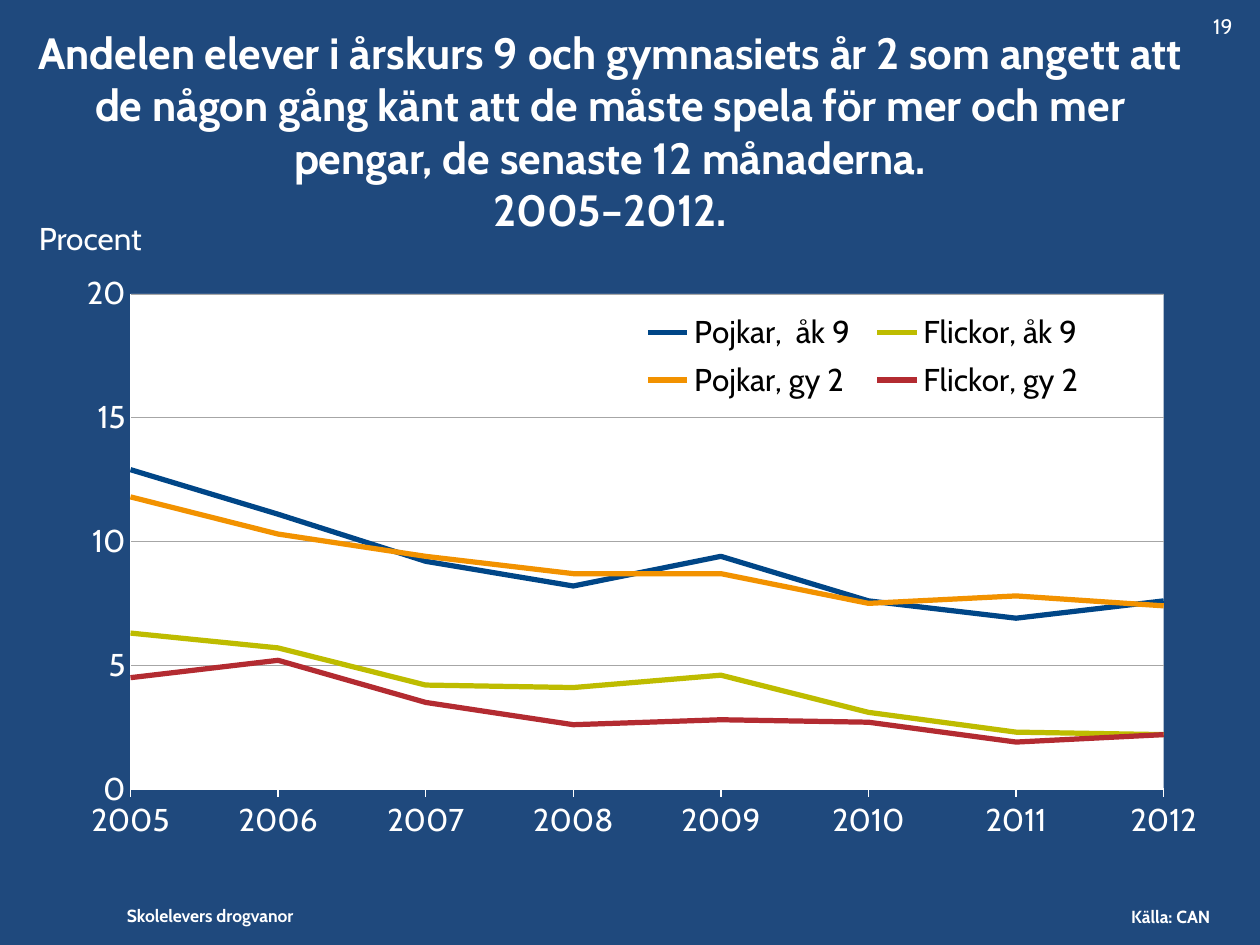
"""Build a slide with a line chart of pupils who felt a need to gamble for more and more money."""
from typing import NamedTuple

from lxml.etree import SubElement
from pptx import Presentation
from pptx.chart.data import CategoryChartData
from pptx.dml.color import RGBColor
from pptx.enum.chart import XL_CHART_TYPE as ChartType, XL_LEGEND_POSITION as LegendPos, XL_TICK_MARK as Tick
from pptx.enum.text import MSO_ANCHOR as Anchor, PP_ALIGN as Align
from pptx.oxml import parse_xml
from pptx.oxml.ns import nsdecls, qn
from pptx.util import Inches, Pt

WHITE = RGBColor(0xFF, 0xFF, 0xFF)
BLACK = RGBColor(0, 0, 0)
NAVY = RGBColor(0x1F, 0x49, 0x7D)
GREY = RGBColor(0xA6, 0xA6, 0xA6)
BLUE = RGBColor(0x00, 0x46, 0x87)
OLIVE = RGBColor(0xBE, 0xBC, 0x00)
ORANGE = RGBColor(0xF2, 0x92, 0x00)
RED = RGBColor(0xB3, 0x2B, 0x31)
FONT = "Cabin"
WIDTH, HEIGHT = Inches(10), Inches(7.5)


class Box(NamedTuple):
    """Left, top, width and height as shares of the enclosing area, in percent."""
    x: float
    y: float
    w: float
    h: float

    def on_slide(self) -> list[int]:
        """Return the box as lengths on the slide."""
        return [int(v * side / 100) for v, side in zip(self, (WIDTH, HEIGHT) * 2)]


class Label(NamedTuple):
    """A text box on the slide."""
    text: str
    box: Box
    size: float
    bold: bool = False
    align: Align = Align.LEFT
    anchor: Anchor = Anchor.TOP
    wrap: bool = True


class Line(NamedTuple):
    """A chart series."""
    name: str
    color: RGBColor
    values: tuple[float, ...]


LABELS = (
    Label("Skolelevers drogvanor", Box(9.1, 95.07, 16.7, 5), 10, True, wrap=False),
    Label("Källa: CAN", Box(88.8, 95.2, 9.4, 3.6), 10, True, wrap=False),
    Label("Andelen elever i årskurs 9 och gymnasiets år 2 som angett att de någon gång känt "
          "att de måste spela för mer och mer pengar, de senaste 12 månaderna.\v2005–2012.",
          Box(1.5, 6.93, 93.8, 13.73), 25, True, Align.CENTER, Anchor.MIDDLE),
    Label("Procent", Box(2.1, 22.53, 14.4, 5.33), 18, anchor=Anchor.MIDDLE),
    Label("19", Box(95.3, 0.8, 4.7, 4), 12),
)
LINES = (
    Line("Pojkar,  åk 9", BLUE, (12.9, 11.1, 9.2, 8.2, 9.4, 7.6, 6.9, 7.6)),
    Line("Flickor, åk 9", OLIVE, (6.3, 5.7, 4.2, 4.1, 4.6, 3.1, 2.3, 2.2)),
    Line("Pojkar, gy 2", ORANGE, (11.8, 10.3, 9.4, 8.7, 8.7, 7.5, 7.8, 7.4)),
    Line("Flickor, gy 2", RED, (4.5, 5.2, 3.5, 2.6, 2.8, 2.7, 1.9, 2.2)),
)
YEARS = [str(year) for year in range(2005, 2013)]
CHART = Box(4.8, 29.07, 90.2, 61.6)
PLOT = Box(6.2, 3.3, 91.4, 85.1)
LEGEND = Box(50.5, 5, 41, 18)


def set_all(target, values: dict) -> None:
    """Set every named attribute of an object."""
    for name, value in values.items():
        setattr(target, name, value)


def style_font(font, size: float, color: RGBColor = WHITE, bold: bool = False) -> None:
    """Give a font the slide's typeface, with a size, colour and weight."""
    set_all(font, {"name": FONT, "size": Pt(size), "bold": bold})
    font.color.rgb = color


def style_line(line, color: RGBColor, width: float) -> None:
    """Give a line a colour and a width in points."""
    line.color.rgb = color
    line.width = Pt(width)


def add_label(s, label: Label) -> None:
    """Add a text box."""
    tf = s.shapes.add_textbox(*label.box.on_slide()).text_frame
    set_all(tf, {"text": label.text, "word_wrap": label.wrap, "vertical_anchor": label.anchor})
    p = tf.paragraphs[0]
    p.alignment = label.align
    for r in p.runs:
        style_font(r.font, label.size, bold=label.bold)


def place(layout, box: Box, inner: bool = False) -> None:
    """Fix the place of a chart part within the chart."""
    manual = SubElement(layout, qn("c:manualLayout"))
    values = {"layoutTarget": "inner"} if inner else {}
    values |= {"xMode": "edge", "yMode": "edge"}
    values |= {name: f"{v / 100:.3f}" for name, v in zip("xywh", box)}
    for name, value in values.items():
        SubElement(manual, qn(f"c:{name}")).set("val", value)


def style_plot(chart) -> None:
    """Place the plot area, fill it with white and start the lines on its edge."""
    area = chart.element.chart.plotArea
    for old in area.findall(qn("c:layout")):
        area.remove(old)
    layout = parse_xml(f"<c:layout {nsdecls('c')}/>")
    area.insert(0, layout)
    place(layout, PLOT, inner=True)
    area.append(parse_xml(f'<c:spPr {nsdecls("c", "a")}><a:solidFill><a:srgbClr val="{WHITE}"/>'
                          "</a:solidFill></c:spPr>"))
    axis = area.find(qn("c:valAx"))
    for old in axis.findall(qn("c:crossBetween")):
        axis.remove(old)
    axis.find(qn("c:crosses")).addnext(parse_xml(f'<c:crossBetween {nsdecls("c")} val="midCat"/>'))


def style_axes(chart) -> None:
    """Format both axes and the gridlines."""
    years, percent = chart.category_axis, chart.value_axis
    set_all(years, {"major_tick_mark": Tick.OUTSIDE, "has_major_gridlines": False})
    set_all(percent, {"minimum_scale": 0, "maximum_scale": 20, "major_unit": 5,
                      "major_tick_mark": Tick.NONE, "has_major_gridlines": True})
    set_all(percent.tick_labels, {"number_format": "0", "number_format_is_linked": False})
    for axis, width in ((years, 0.75), (percent, 0.23)):
        style_font(axis.tick_labels.font, 18)
        style_line(axis.format.line, WHITE, width)
    style_line(percent.major_gridlines.format.line, GREY, 0.23)


def style_legend(chart) -> None:
    """Lay the legend over the upper right of the plot."""
    chart.has_legend = True
    legend = chart.legend
    set_all(legend, {"position": LegendPos.TOP, "include_in_layout": False})
    style_font(legend.font, 18, BLACK)
    layout = parse_xml(f"<c:layout {nsdecls('c')}/>")
    place(layout, LEGEND)
    for old in legend._element.findall(qn("c:layout")):
        legend._element.remove(old)
    legend._element.find(qn("c:legendPos")).addnext(layout)


def add_line_chart(s, lines: tuple[Line, ...]) -> None:
    """Add the chart with one line per group of pupils."""
    data = CategoryChartData(number_format="0.0")
    data.categories = YEARS
    for line in lines:
        data.add_series(line.name, line.values)
    chart = s.shapes.add_chart(ChartType.LINE, *CHART.on_slide(), data).chart
    chart.has_title = False
    style_font(chart.font, 18)
    chart.plots[0].vary_by_categories = False
    for series, line in zip(chart.plots[0].series, lines):
        series.smooth = False
        style_line(series.format.line, line.color, 3)
    style_axes(chart)
    style_legend(chart)
    style_plot(chart)


def main() -> None:
    """Build and save the slide."""
    prs = Presentation()
    set_all(prs, {"slide_width": WIDTH, "slide_height": HEIGHT})
    s = prs.slides.add_slide(prs.slide_layouts[6])
    s.background.fill.solid()
    s.background.fill.fore_color.rgb = NAVY
    add_line_chart(s, LINES)
    for label in LABELS:
        add_label(s, label)
    prs.save("out.pptx")


if __name__ == "__main__":
    main()
